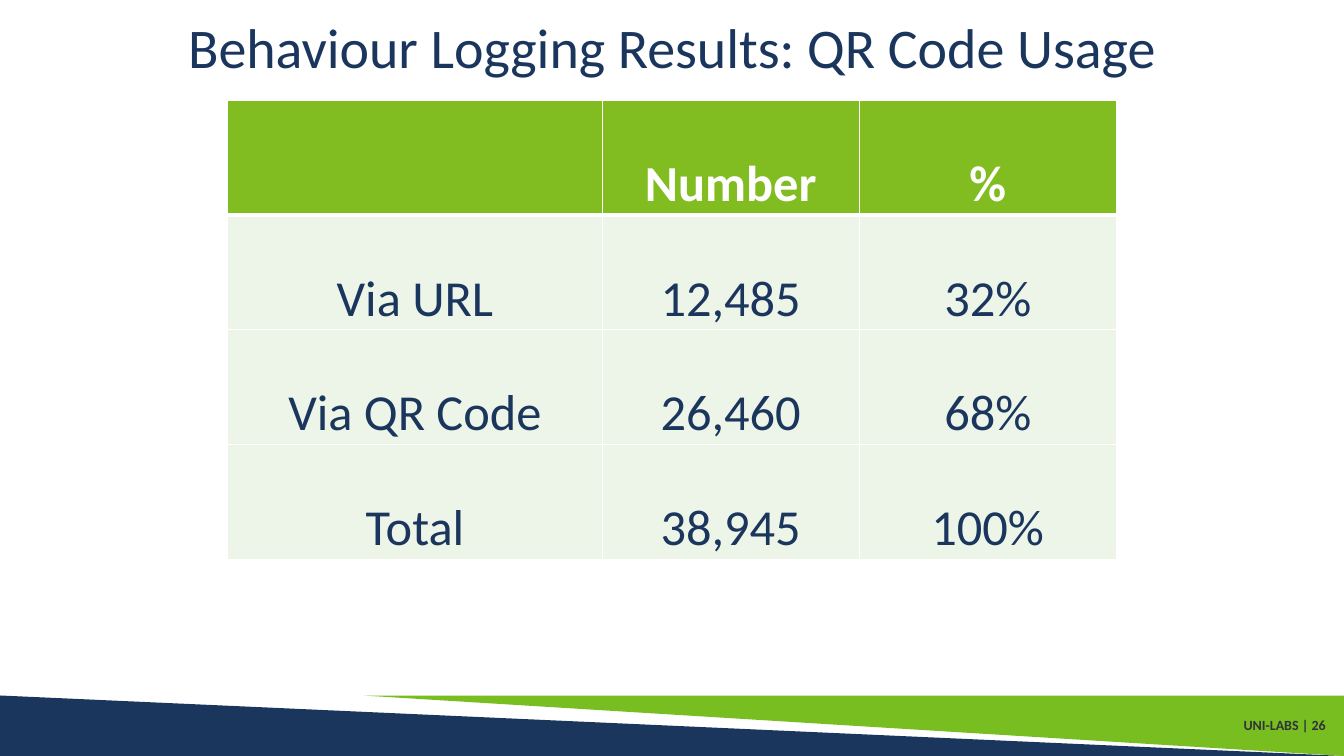
"""Build the slide that tabulates QR code usage against URL usage."""
import pptx
import pptx.dml.color
import pptx.enum.shapes
import pptx.enum.text
import pptx.oxml
import pptx.oxml.ns
import pptx.util

Pt = pptx.util.Pt
RGBColor = pptx.dml.color.RGBColor
ALIGN = pptx.enum.text.PP_ALIGN
ANCHOR = pptx.enum.text.MSO_ANCHOR

NAVY = RGBColor(0x1B, 0x36, 0x5D)
GREEN = RGBColor(0x78, 0xBE, 0x20)
HEADER_GREEN = RGBColor(0x81, 0xBD, 0x20)
PALE_GREEN = RGBColor(0xED, 0xF4, 0xE8)
CHARCOAL = RGBColor(0x2E, 0x34, 0x38)
WHITE = RGBColor(0xFF, 0xFF, 0xFF)

SLIDE_WIDTH, SLIDE_HEIGHT = 960, 540
BAND_TOP = 496.8
HEADING = "Behaviour Logging Results: QR Code Usage"
FOOTER = "UNI-LABS | 26"
USAGE = [
    ("", "Number", "%"),
    ("Via URL", "12,485", "32%"),
    ("Via QR Code", "26,460", "68%"),
    ("Total", "38,945", "100%"),
]
COLUMN_WIDTHS = (267.6, 183.6, 183.6)
ROW_HEIGHT = 82
TABLE_TOP = 71.5
BANDS = [(0, 0, NAVY), (259.5, 180, GREEN)]
CAPTIONS = [
    (HEADING, (0, 0, SLIDE_WIDTH, 71.3), ALIGN.CENTER,
     {"size": Pt(40), "color": NAVY, "bold": False}),
    (FOOTER, (845.3, 505.4, 108.7, 26.6), ALIGN.RIGHT,
     {"size": Pt(10), "color": CHARCOAL, "bold": True}),
]
CELL_FORMAT = {
    "margin_left": Pt(0.7), "margin_top": Pt(0.7), "margin_right": Pt(0.7),
    "margin_bottom": Pt(0), "vertical_anchor": ANCHOR.BOTTOM,
}


def write(paragraph, wording, alignment, style):
    paragraph.alignment = alignment
    run = paragraph.add_run()
    run.text = wording
    run.font.name = "Calibri"
    run.font.size = style["size"]
    run.font.bold = style["bold"]
    run.font.color.rgb = style["color"]


def add_band(slide, left, rotation, color):
    band = slide.shapes.add_shape(
        pptx.enum.shapes.MSO_SHAPE.RIGHT_TRIANGLE, Pt(left), Pt(BAND_TOP),
        Pt(SLIDE_WIDTH - left), Pt(SLIDE_HEIGHT - BAND_TOP))
    band.rotation = rotation
    band.shadow.inherit = False
    band.fill.solid()
    band.fill.fore_color.rgb = color
    band.line.fill.background()


def add_caption(slide, wording, place, alignment, style):
    frame = slide.shapes.add_textbox(*map(Pt, place)).text_frame
    frame.word_wrap = True
    frame.vertical_anchor = ANCHOR.MIDDLE
    frame.paragraphs[0].line_spacing = 0.9
    write(frame.paragraphs[0], wording, alignment, style)


def add_borders(cell, widths):
    properties = cell._tc.get_or_add_tcPr()
    for side, width in widths.items():
        properties.append(pptx.oxml.parse_xml(
            f'<a:ln{side} {pptx.oxml.ns.nsdecls("a")} w="{Pt(width)}"><a:solidFill>'
            f'<a:srgbClr val="{WHITE}"/></a:solidFill></a:ln{side}>'))


def add_usage_table(slide):
    width = sum(COLUMN_WIDTHS)
    table = slide.shapes.add_table(
        len(USAGE), len(COLUMN_WIDTHS), Pt((SLIDE_WIDTH - width) / 2), Pt(TABLE_TOP),
        Pt(width), Pt(ROW_HEIGHT * len(USAGE))).table
    for column, column_width in zip(table.columns, COLUMN_WIDTHS):
        column.width = Pt(column_width)
    for row_index, entries in enumerate(USAGE):
        header = row_index == 0
        table.rows[row_index].height = Pt(ROW_HEIGHT)
        style = {"size": Pt(36), "color": WHITE if header else NAVY, "bold": header}
        borders = {"L": 1, "R": 1, "T": 3 if row_index == 1 else 1, "B": 3 if header else 1}
        for column_index, entry in enumerate(entries):
            cell = table.cell(row_index, column_index)
            for attribute, setting in CELL_FORMAT.items():
                setattr(cell, attribute, setting)
            add_borders(cell, borders)
            cell.fill.solid()
            cell.fill.fore_color.rgb = HEADER_GREEN if header else PALE_GREEN
            if entry:
                write(cell.text_frame.paragraphs[0], entry, ALIGN.CENTER, style)


def main():
    deck = pptx.Presentation()
    deck.slide_width, deck.slide_height = Pt(SLIDE_WIDTH), Pt(SLIDE_HEIGHT)
    slide = deck.slides.add_slide(deck.slide_layouts[6])
    for band in BANDS:
        add_band(slide, *band)
    for caption in CAPTIONS:
        add_caption(slide, *caption)
    add_usage_table(slide)
    deck.save("out.pptx")


if __name__ == "__main__":
    main()
